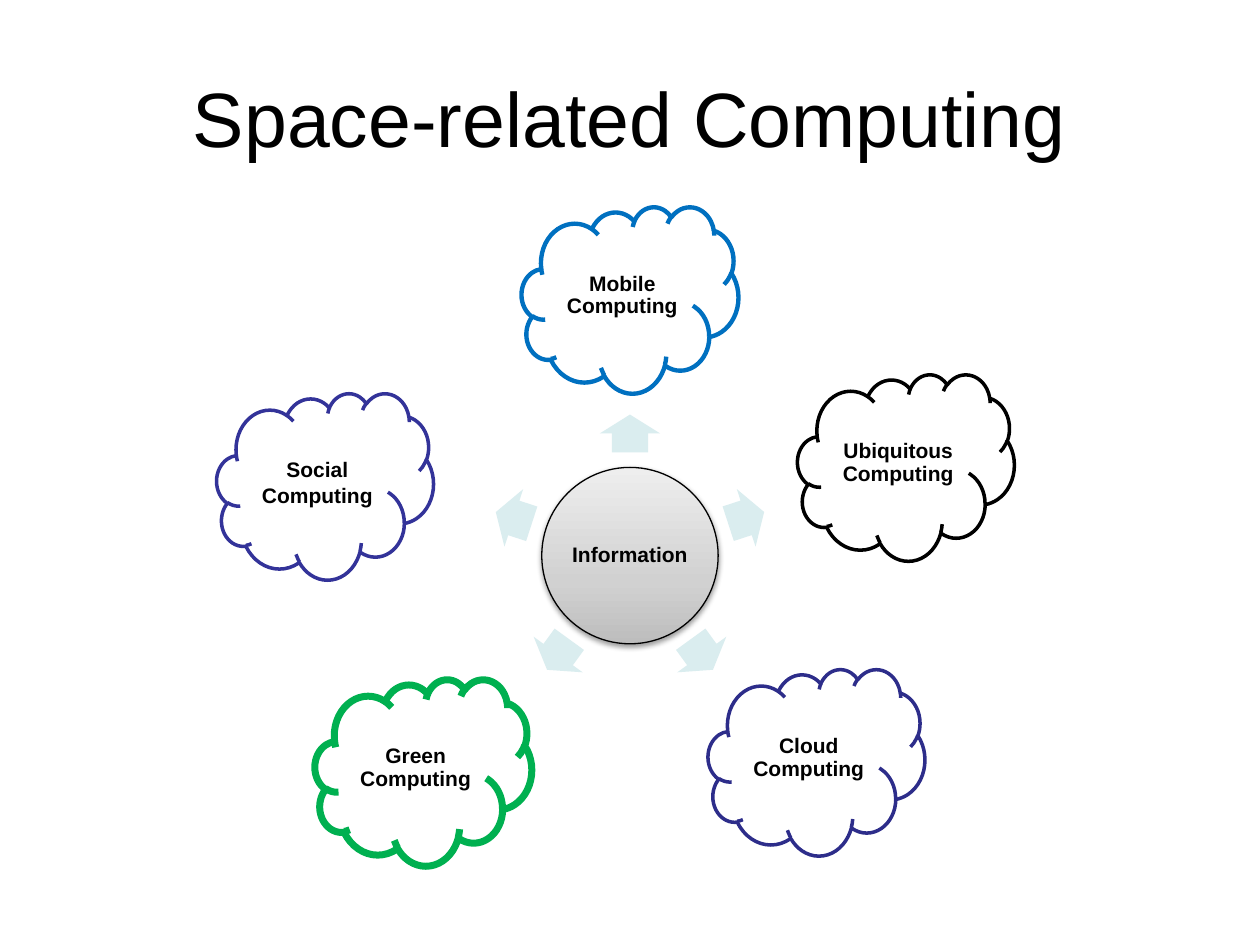
import math
from lxml import etree
from pptx import Presentation, util as u
from pptx.dml.color import RGBColor
from pptx.enum import shapes, text
from pptx.oxml import parse_xml
from pptx.oxml.ns import nsdecls

BLACK = RGBColor(0, 0, 0)
WHITE = RGBColor(255, 255, 255)
PALE_TEAL = RGBColor(0xDA, 0xED, 0xEF)
INDIGO = RGBColor(0x33, 0x33, 0x99)
NAVY = RGBColor(0x2D, 0x2D, 0x8A)
BLUE = RGBColor(0, 0x70, 0xC0)
GREEN = RGBColor(0, 0xB0, 0x50)
GREYS = {0: RGBColor(0xBD, 0xBD, 0xBD), 35: RGBColor(0xD1, 0xD1, 0xD1),
         100: RGBColor(0xEE, 0xEE, 0xEE)}

WIDTH, HEIGHT = 10, 7.5
HUB = (0.5 * WIDTH, 4.41)
HUB_SIZE = 1.4
CLOUD_SIZE = (1.72, 1.48)
ARROW_SIZE = (0.3, 0.48)
ARROW_RADIUS = 0.97
LABEL_FONT = {"name": "Arial", "size": u.Pt(12), "bold": True}
TITLE_FONT = {"name": "Arial", "size": u.Pt(44), "bold": False}
TIGHT = {"line_spacing": 0.9, "space_after": u.Pt(4.2)}

CLOUDS = [
    ("Social Computing", 1.72, 3.12, INDIGO, 2, {}),
    ("Mobile Computing", 4.14, 1.64, BLUE, 2.5, TIGHT),
    ("Ubiquitous Computing", 6.33, 2.97, BLACK, 2, TIGHT),
    ("Cloud Computing", 5.62, 5.31, NAVY, 2, TIGHT),
    ("Green Computing", 2.5, 5.39, GREEN, 4, TIGHT),
]


def apply(target, values):
    for name, value in values.items():
        setattr(target, name, value)


def write(box, words, font, spacing):
    apply(box.text_frame, {"word_wrap": True, "vertical_anchor": text.MSO_ANCHOR.MIDDLE})
    paragraph = box.text_frame.paragraphs[0]
    apply(paragraph, {"alignment": text.PP_ALIGN.CENTER, **spacing})
    run = paragraph.add_run()
    run.text = words
    apply(run.font, font)
    run.font.color.rgb = BLACK


def add_preset(slide, preset, left, top, size, fill=None, line=None, weight=0):
    figure = slide.shapes.add_shape(preset, *map(u.Inches, (left, top, *size)))
    figure.shadow.inherit = False
    if fill is not None:
        figure.fill.solid()
        figure.fill.fore_color.rgb = fill
    if line is None:
        figure.line.fill.background()
    else:
        figure.line.color.rgb = line
        figure.line.width = u.Pt(weight)
    return figure


def add_title(slide, words):
    title = slide.shapes.add_textbox(*map(u.Inches, (
        0.05 * WIDTH, 0.04 * HEIGHT, 0.9 * WIDTH, HEIGHT / 6)))
    write(title, words, TITLE_FONT, {})


def shade_hub(hub):
    stops = "".join(f'<a:gs pos="{share * 1000}"><a:srgbClr val="{grey}"/></a:gs>'
                    for share, grey in GREYS.items())
    gradient = parse_xml(
        f'<a:gradFill {nsdecls("a")} rotWithShape="1"><a:gsLst>{stops}</a:gsLst>'
        '<a:lin ang="16200000" scaled="0"/></a:gradFill>')
    shadow = parse_xml(
        f'<a:outerShdw {nsdecls("a")} blurRad="40000" dist="20000" dir="5400000" '
        'rotWithShape="0"><a:srgbClr val="000000"><a:alpha val="38000"/></a:srgbClr>'
        '</a:outerShdw>')
    properties = hub.element.spPr
    solid = properties.find(etree.QName(gradient.nsmap["a"], "solidFill"))
    properties.replace(solid, gradient)
    properties.find(etree.QName(gradient.nsmap["a"], "effectLst")).append(shadow)


def add_hub(slide, words):
    left, top = (middle - HUB_SIZE / 2 for middle in HUB)
    hub = add_preset(slide, shapes.MSO_SHAPE.OVAL, left, top,
                     (HUB_SIZE, HUB_SIZE), WHITE, BLACK, 0.75)
    shade_hub(hub)
    sides = ("left", "top", "right", "bottom")
    apply(hub.text_frame, {f"margin_{side}": u.Inches(0.02) for side in sides})
    write(hub, words, LABEL_FONT, TIGHT)


def add_arrow(slide, angle):
    turn = math.radians(angle)
    left = HUB[0] + ARROW_RADIUS * math.cos(turn) - ARROW_SIZE[0] / 2
    top = HUB[1] + ARROW_RADIUS * math.sin(turn) - ARROW_SIZE[1] / 2
    arrow = add_preset(slide, shapes.MSO_SHAPE.RIGHT_ARROW, left, top, ARROW_SIZE, PALE_TEAL)
    arrow.adjustments[0] = 0.6
    arrow.adjustments[1] = 0.5
    arrow.rotation = angle % 360


def add_cloud(slide, words, left, top, colour, weight, spacing):
    cloud = add_preset(slide, shapes.MSO_SHAPE.CLOUD, left, top, CLOUD_SIZE,
                       WHITE, colour, weight)
    write(cloud, words, LABEL_FONT, spacing)


def main():
    deck = Presentation()
    apply(deck, {"slide_width": u.Inches(WIDTH), "slide_height": u.Inches(HEIGHT)})
    slide = deck.slides.add_slide(deck.slide_layouts[6])
    add_title(slide, "Space-related Computing")
    add_hub(slide, "Information")
    for step in range(5):
        add_arrow(slide, 72 * step - 90)
    for cloud in CLOUDS:
        add_cloud(slide, *cloud)
    deck.save("out.pptx")


if __name__ == "__main__":
    main()
